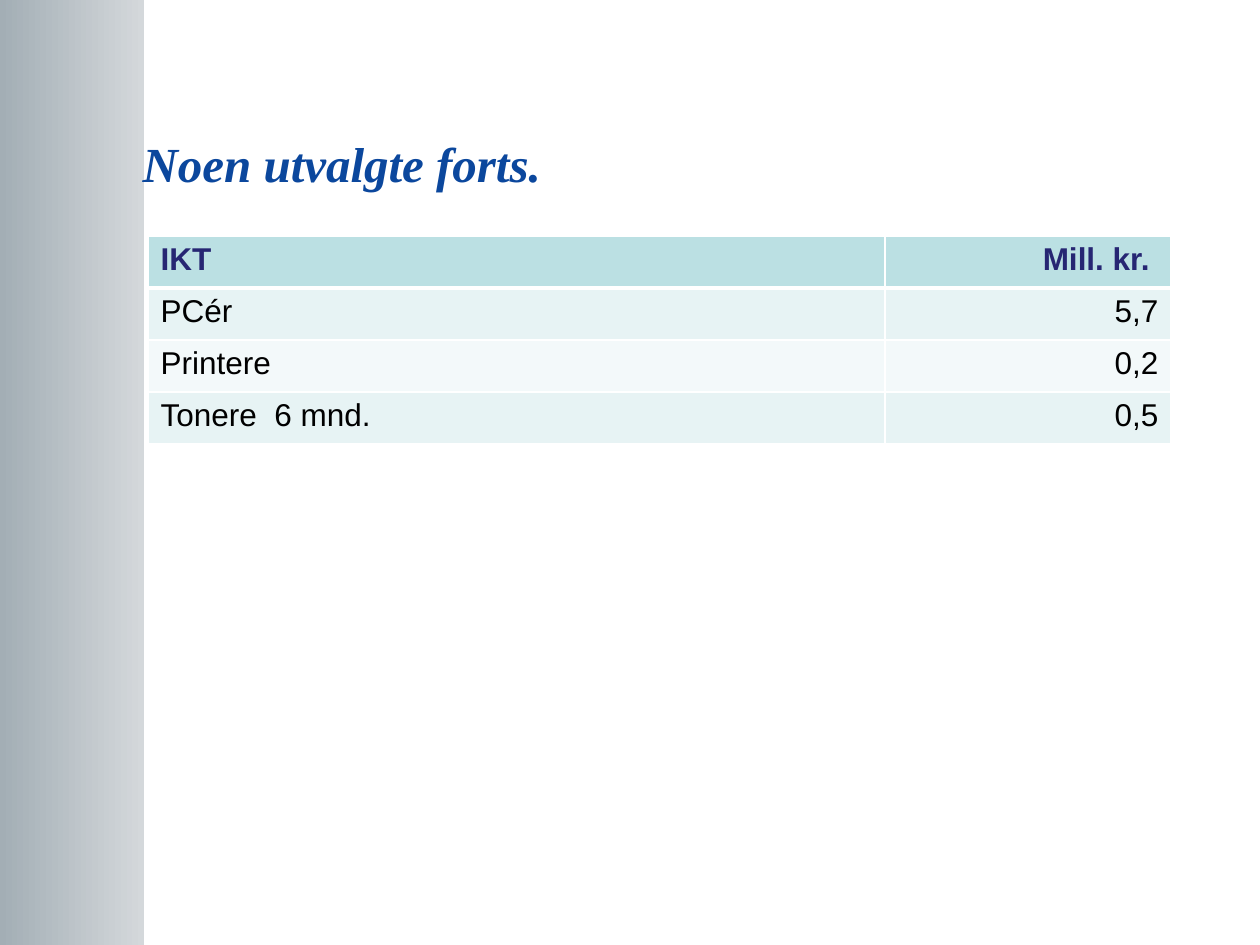
from typing import NamedTuple

from lxml import etree
from pptx import Presentation
from pptx.dml.color import RGBColor
from pptx.enum.shapes import MSO_SHAPE
from pptx.enum.text import MSO_ANCHOR, PP_ALIGN
from pptx.oxml.ns import qn
from pptx.util import Emu, Pt

RECTANGLE = MSO_SHAPE.RECTANGLE
MIDDLE = MSO_ANCHOR.MIDDLE
LEFT, RIGHT = PP_ALIGN.LEFT, PP_ALIGN.RIGHT

EMU_PER_PX = 914400 / 126
SLIDE_WIDTH, SLIDE_HEIGHT = 1260, 945
COLUMN_WIDTHS = (737, 286)
ROW_HEIGHT = 52
ROWS = (
    ("IKT", "Mill. kr. "),
    ("PCér", "5,7"),
    ("Printere", "0,2"),
    ("Tonere  6 mnd.", "0,5"),
)
HEADER_FILL = "BBE0E3"
BAND_FILLS = ("E7F3F4", "F3F9FA")
BORDER_COLOR = "FFFFFF"


class TextStyle(NamedTuple):
    font: str
    size: int
    color: str
    bold: bool = False
    italic: bool = False


TITLE_STYLE = TextStyle("Times New Roman", 28, "0B479D", True, True)
HEADER_STYLE = TextStyle("Arial", 18, "262673", True)
BODY_STYLE = TextStyle("Arial", 18, "000000")


def px(length: int) -> Emu:
    return Emu(round(length * EMU_PER_PX))


def rgb(value: str) -> RGBColor:
    return RGBColor.from_string(value)


def write(text_frame, text: str, style: TextStyle, align=LEFT) -> None:
    paragraph = text_frame.paragraphs[0]
    paragraph.alignment = align
    run = paragraph.add_run()
    run.text = text
    run.font.name = style.font
    run.font.size = Pt(style.size)
    run.font.bold = style.bold
    run.font.italic = style.italic
    run.font.color.rgb = rgb(style.color)


def add_sidebar(slide) -> None:
    """Draw the gradient band behind everything else."""
    sidebar = slide.shapes.add_shape(RECTANGLE, 0, 0, px(144), px(SLIDE_HEIGHT))
    sidebar.shadow.inherit = False
    sidebar.line.fill.background()
    sidebar.fill.gradient()
    sidebar.fill.gradient_angle = 0
    for stop, color in zip(sidebar.fill.gradient_stops, ("A3AEB5", "D4D8DB")):
        stop.color.rgb = rgb(color)
    slide.shapes._spTree.insert(2, sidebar._element)


def add_title(slide) -> None:
    title = slide.shapes.title
    title.left, title.top = px(130), px(84)
    title.width, title.height = px(1071), px(158)
    title.text_frame.vertical_anchor = MIDDLE
    write(title.text_frame, "Noen utvalgte forts.", TITLE_STYLE)


def set_borders(cell, bottom_width: int) -> None:
    properties = cell._tc.get_or_add_tcPr()
    widths = {"a:lnL": 1, "a:lnR": 1, "a:lnT": 1, "a:lnB": bottom_width}
    for position, (tag, width) in enumerate(widths.items()):
        line = etree.Element(qn(tag), w=str(Pt(width)))
        fill = etree.SubElement(line, qn("a:solidFill"))
        etree.SubElement(fill, qn("a:srgbClr"), val=BORDER_COLOR)
        properties.insert(position, line)


def add_cost_table(slide) -> None:
    table = slide.shapes.add_table(
        len(ROWS), len(COLUMN_WIDTHS), px(148), px(236),
        px(sum(COLUMN_WIDTHS)), px(ROW_HEIGHT * len(ROWS)),
    ).table
    for column, width in zip(table.columns, COLUMN_WIDTHS):
        column.width = px(width)
    for row_index, texts in enumerate(ROWS):
        is_header = row_index == 0
        table.rows[row_index].height = px(ROW_HEIGHT)
        fill = HEADER_FILL if is_header else BAND_FILLS[(row_index - 1) % 2]
        style = HEADER_STYLE if is_header else BODY_STYLE
        for column_index, (text, align) in enumerate(zip(texts, (LEFT, RIGHT))):
            cell = table.cell(row_index, column_index)
            cell.fill.solid()
            cell.fill.fore_color.rgb = rgb(fill)
            set_borders(cell, 3 if is_header else 1)
            write(cell.text_frame, text, style, align)


def main() -> None:
    presentation = Presentation()
    presentation.slide_width = px(SLIDE_WIDTH)
    presentation.slide_height = px(SLIDE_HEIGHT)
    title_only = presentation.slide_layouts[5]
    slide = presentation.slides.add_slide(title_only)
    add_sidebar(slide)
    add_title(slide)
    add_cost_table(slide)
    presentation.save("out.pptx")


if __name__ == "__main__":
    main()
